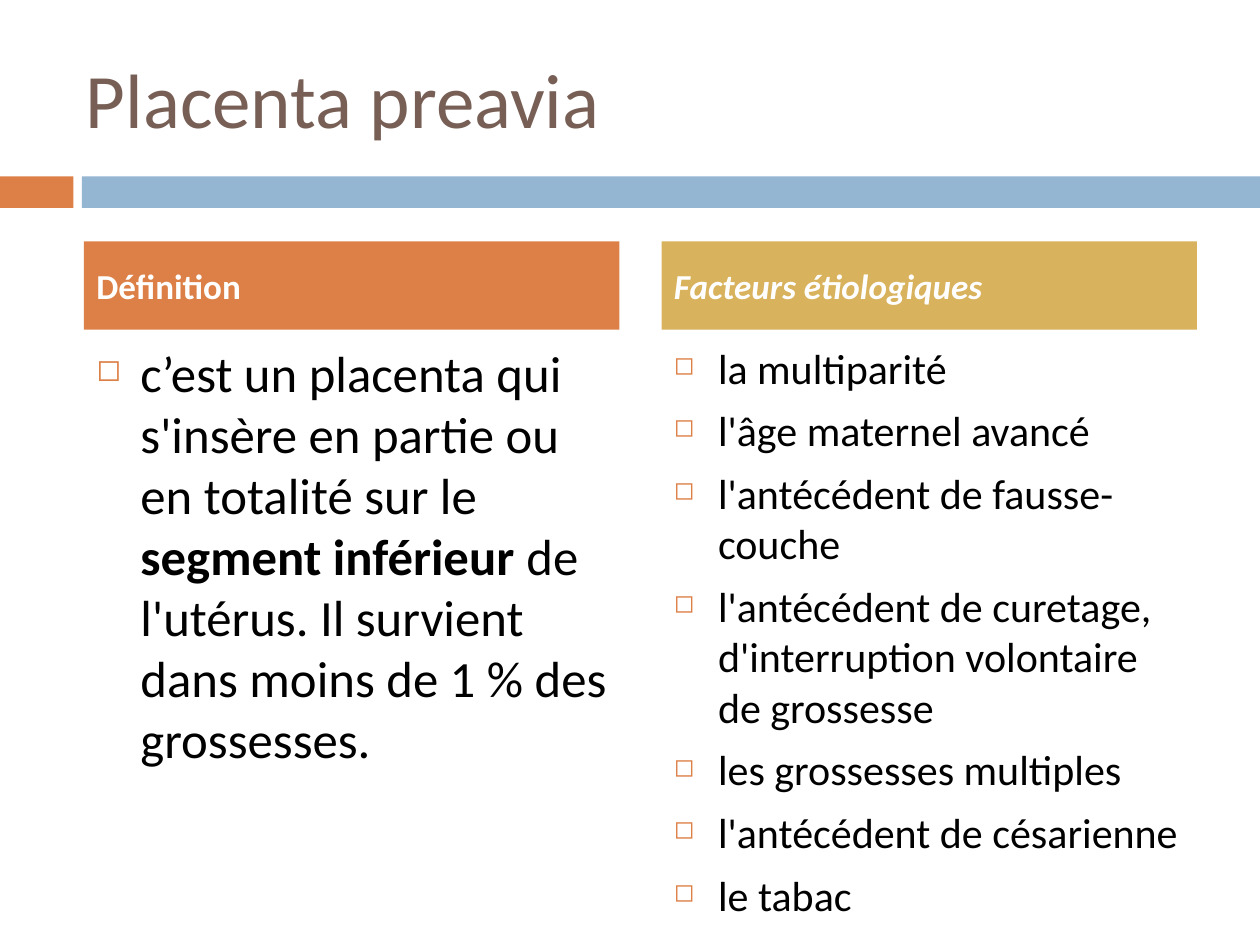
from lxml.etree import SubElement
from pptx import Presentation
from pptx.dml.color import RGBColor
from pptx.enum.shapes import MSO_SHAPE as SHAPE
from pptx.enum.text import MSO_ANCHOR as ANCHOR
from pptx.oxml.ns import qn
from pptx.util import Pt

FONT = "Calibri"
COLORS = {"orange": "DD8047", "blue": "94B6D2", "gold": "D8B25C",
          "brown": "775F55", "black": "000000", "white": "FFFFFF"}

TITLE = "Placenta preavia"
# Each paragraph is a list of (text, bold) runs.
COLUMNS = [
    {"heading": "Définition", "fill": "orange", "italic": False, "size": 29,
     "items": [[
         ("c’est un placenta qui s'insère en partie ou en totalité sur le ", False),
         ("segment inférieur ", True),
         ("de l'utérus. Il survient dans moins de 1 % des grossesses.", False)]]},
    {"heading": "Facteurs étiologiques", "fill": "gold", "italic": True, "size": 24,
     "items": [[(item, False)] for item in (
         "la multiparité",
         "l'âge maternel avancé",
         "l'antécédent de fausse-couche",
         "l'antécédent de curetage, d'interruption volontaire de grossesse",
         "les grossesses multiples",
         "l'antécédent de césarienne",
         "le tabac")]},
]

SLIDE_W, SLIDE_H = 720, 540
BAR_Y, BAR_H = 100.8, 18
BARS = [("orange", 0, 42), ("blue", 46.8, SLIDE_W - 46.8)]
COL_X, COL_W, COL_GAP = 48, 306, 24
HEAD_Y, HEAD_H = 138, 50.4
BODY_Y, BODY_H = 192, 282
INDENT, SPACE_BEFORE = 25.2, 7


def rgb(name):
    return RGBColor.from_string(COLORS[name])


def add_bar(slide, color, x, y, w, h):
    s = slide.shapes.add_shape(SHAPE.RECTANGLE, Pt(x), Pt(y), Pt(w), Pt(h))
    s.shadow.inherit = False
    s.fill.solid()
    s.fill.fore_color.rgb = rgb(color)
    s.line.fill.background()


def add_bullet(p):
    pPr = p._p.get_or_add_pPr()
    pPr.set("marL", str(Pt(INDENT)))
    pPr.set("indent", str(-Pt(INDENT)))
    color = SubElement(pPr, qn("a:buClr"))
    SubElement(color, qn("a:srgbClr"), val=COLORS["orange"])
    SubElement(pPr, qn("a:buSzPct"), val="60000")
    SubElement(pPr, qn("a:buChar"), char="◻")


def add_text(slide, paragraphs, x, y, w, h, *, size, color,
             italic=False, anchor=ANCHOR.TOP, bullets=False):
    """Add a text box holding paragraphs of (text, bold) runs."""
    tf = slide.shapes.add_textbox(Pt(x), Pt(y), Pt(w), Pt(h)).text_frame
    tf.word_wrap = True
    tf.vertical_anchor = anchor
    for i, runs in enumerate(paragraphs):
        p = tf.add_paragraph() if i else tf.paragraphs[0]
        if bullets:
            add_bullet(p)
        if i:
            p.space_before = Pt(SPACE_BEFORE)
        for text, bold in runs:
            r = p.add_run()
            r.text = text
            r.font.name = FONT
            r.font.size = Pt(size)
            r.font.bold = bold
            r.font.italic = italic
            r.font.color.rgb = rgb(color)


def main():
    prs = Presentation()
    prs.slide_width, prs.slide_height = Pt(SLIDE_W), Pt(SLIDE_H)
    slide = prs.slides.add_slide(prs.slide_layouts[6])

    for color, x, w in BARS:
        add_bar(slide, color, x, BAR_Y, w, BAR_H)
    add_text(slide, [[(TITLE, False)]], 42, 21.6, 642, 68.4,
             size=44, color="brown", anchor=ANCHOR.MIDDLE)

    for i, col in enumerate(COLUMNS):
        x = COL_X + i * (COL_W + COL_GAP)
        add_bar(slide, col["fill"], x, HEAD_Y, COL_W, HEAD_H)
        add_text(slide, [[(col["heading"], True)]], x, HEAD_Y, COL_W, HEAD_H,
                 size=20, color="white", italic=col["italic"], anchor=ANCHOR.MIDDLE)
        add_text(slide, col["items"], x, BODY_Y, COL_W, BODY_H,
                 size=col["size"], color="black", bullets=True)

    prs.save("out.pptx")


if __name__ == "__main__":
    main()
